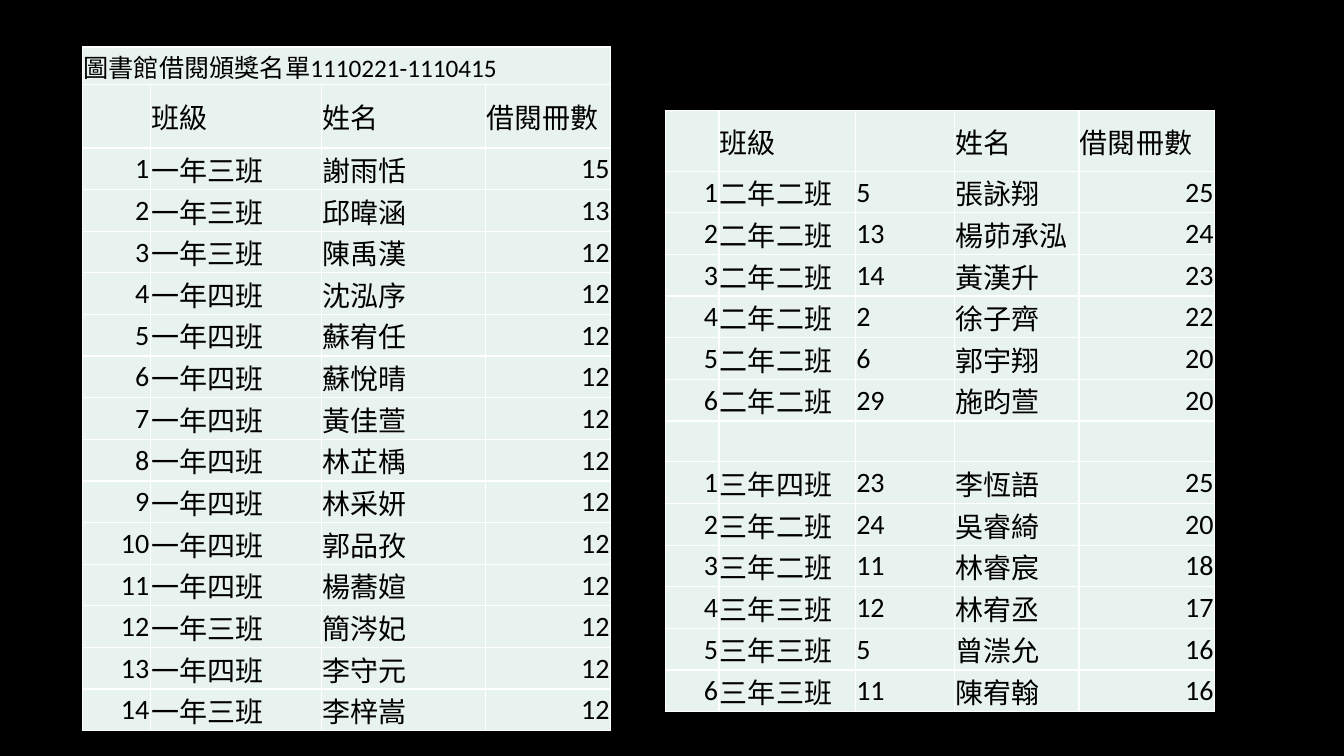
from lxml.etree import fromstring
from pptx import Presentation
from pptx.dml.color import RGBColor
from pptx.enum.text import MSO_ANCHOR, PP_ALIGN
from pptx.util import Pt

COLORS = {"back": "000000", "text": "000000", "cell": "E8F2EE", "line": "FFFFFF"}
FONT = "Calibri"
NS = "http://schemas.openxmlformats.org/drawingml/2006/main"

TITLE = "圖書館借閱頒獎名單1110221-1110415"
FIRST = [
    ("一年三班", "謝雨恬", 15),
    ("一年三班", "邱暐涵", 13),
    ("一年三班", "陳禹漢", 12),
    ("一年四班", "沈泓序", 12),
    ("一年四班", "蘇宥任", 12),
    ("一年四班", "蘇悅晴", 12),
    ("一年四班", "黃佳萱", 12),
    ("一年四班", "林芷楀", 12),
    ("一年四班", "林采妍", 12),
    ("一年四班", "郭品孜", 12),
    ("一年四班", "楊蕎媗", 12),
    ("一年三班", "簡涔妃", 12),
    ("一年四班", "李守元", 12),
    ("一年三班", "李梓嵩", 12),
]
SECOND = [
    ("二年二班", 5, "張詠翔", 25),
    ("二年二班", 13, "楊茆承泓", 24),
    ("二年二班", 14, "黃漢升", 23),
    ("二年二班", 2, "徐子齊", 22),
    ("二年二班", 6, "郭宇翔", 20),
    ("二年二班", 29, "施昀萱", 20),
]
THIRD = [
    ("三年四班", 23, "李恆語", 25),
    ("三年二班", 24, "吳睿綺", 20),
    ("三年二班", 11, "林睿宸", 18),
    ("三年三班", 12, "林宥丞", 17),
    ("三年三班", 5, "曾漴允", 16),
    ("三年三班", 11, "陳宥翰", 16),
]


def rank(rows):
    return [(n, *row) for n, row in enumerate(rows, 1)]


LEFT = [(TITLE, "", "", ""), ("", "班級", "姓名", "借閱冊數"), *rank(FIRST)]
RIGHT = [("", "班級", "", "姓名", "借閱冊數"), *rank(SECOND), ("",) * 5, *rank(THIRD)]

TABLES = [
    {"rows": RIGHT, "x": 475.2, "y": 79.1, "cols": [38.4, 97.4, 70.6, 89.2, 96.8],
     "high": 25.2, "head": 0, "tall": 43.2},
    {"rows": LEFT, "x": 59, "y": 33.5, "cols": [48.4, 122.4, 117.2, 89.2],
     "high": 26, "head": 1, "tall": 45.4},
]


def write(cell, text, size=20, align=PP_ALIGN.LEFT):
    cell.vertical_anchor = MSO_ANCHOR.MIDDLE
    cell.margin_left = cell.margin_right = cell.margin_top = Pt(0.7)
    cell.margin_bottom = 0
    par = cell.text_frame.paragraphs[0]
    par.alignment = align
    run = par.add_run()
    run.text = str(text)
    run.font.name = FONT
    run.font.size = Pt(size)
    run.font.color.rgb = RGBColor.from_string(COLORS["text"])


def paint(cell):
    cell.fill.solid()
    cell.fill.fore_color.rgb = RGBColor.from_string(COLORS["cell"])
    props = cell._tc.get_or_add_tcPr()
    for n, side in enumerate("LRTB"):
        props.insert(n, fromstring(
            f'<a:ln{side} xmlns:a="{NS}" w="{Pt(1)}"><a:solidFill>'
            f'<a:srgbClr val="{COLORS["line"]}"/></a:solidFill></a:ln{side}>'))


def draw(slide, rows, x, y, cols, high, head, tall):
    sizes = [tall if r == head else high for r in range(len(rows))]
    frame = slide.shapes.add_table(len(rows), len(cols), Pt(x), Pt(y),
                                   Pt(sum(cols)), Pt(sum(sizes)))
    table = frame.table
    table.first_row = table.horz_banding = False
    for col, width in zip(table.columns, cols):
        col.width = Pt(width)
    for r, row in enumerate(rows):
        table.rows[r].height = Pt(sizes[r])
        for c, text in enumerate(row):
            cell = table.cell(r, c)
            paint(cell)
            if text != "":
                edge = r > head and c in (0, len(cols) - 1)
                write(cell, text, size=18 if r < head else 20,
                      align=PP_ALIGN.RIGHT if edge else PP_ALIGN.LEFT)
    if head:
        table.cell(0, 0).merge(table.cell(0, len(cols) - 1))


def main():
    deck = Presentation()
    deck.slide_width, deck.slide_height = Pt(960), Pt(540)
    slide = deck.slides.add_slide(deck.slide_layouts[6])
    back = slide.background.fill
    back.solid()
    back.fore_color.rgb = RGBColor.from_string(COLORS["back"])
    for item in TABLES:
        draw(slide, **item)
    deck.save("out.pptx")


if __name__ == "__main__":
    main()
